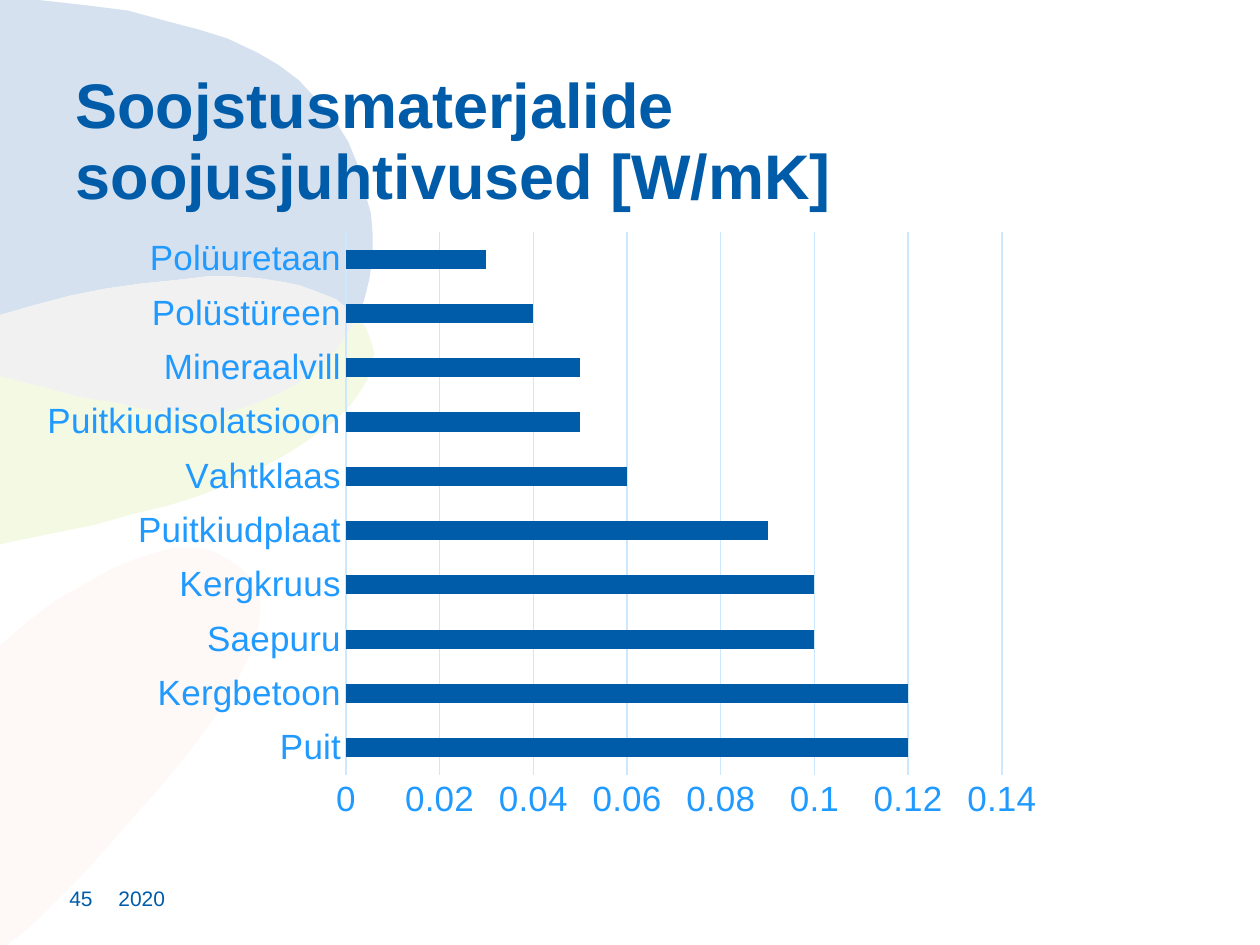
from lxml import etree
from pptx import Presentation
from pptx.chart.data import CategoryChartData
from pptx.dml.color import RGBColor
from pptx.enum import chart as ch, text as tx
from pptx.oxml.ns import qn
from pptx.util import Pt

FONT = "Arial"
COLORS = {"blue": "005CA8", "label": "219AFF", "grid": "CCE8FF", "sky": "D6E1F0",
          "lime": "F3F9E3", "grey": "F1F1F1", "rose": "FEF9F7"}

# Content
TITLE = "Soojstusmaterjalide soojusjuhtivused [W/mK]"
YEAR, PAGE = "2020", "45"
CONDUCTIVITY = [
    ("Puit", 0.12), ("Kergbetoon", 0.12), ("Saepuru", 0.1), ("Kergkruus", 0.1),
    ("Puitkiudplaat", 0.09), ("Vahtklaas", 0.06), ("Puitkiudisolatsioon", 0.05),
    ("Mineraalvill", 0.05), ("Polüstüreen", 0.04), ("Polüuretaan", 0.03),
]
CHART_BOX = (15, 125, 589, 351)
PLOT_BOX = (197.7, 132.6, 374.9, 310.3)

# Petal outlines in points; the two lens edges run from left to right
LENS_TOP = [(0, 180), (21, 174), (40, 169.2), (60, 165), (81, 162), (101, 159.6),
            (118, 158.4), (133, 158.4), (147.6, 159.1), (161, 160.8), (171.4, 163.4),
            (182, 167), (191.5, 171.4), (198, 175.5), (203.8, 180.7)]
LENS_BOTTOM = [(0, 214.6), (24, 221), (46, 226.8), (66, 230.5), (83.5, 233.5),
               (99.5, 235.5), (112, 236.2), (122.5, 235.8), (132, 234.7),
               (142, 231.8), (152, 228), (161, 223.9), (170, 219), (178, 212.4),
               (185.8, 206), (191.5, 200.2), (196.6, 193), (203.8, 180.7)]
SKY_RIM = [(208, 172), (211, 160), (213, 147), (213.2, 134), (212, 122.4),
           (208.5, 108), (204, 93), (198.7, 81.4), (191, 68.4), (182, 57.6),
           (171.4, 46.1), (159, 37), (147, 29.5), (130, 22.3), (114, 16.6),
           (95, 11.5), (73, 6.5), (49, 2.9), (21.6, 0), (0, 0)]
LIME_RIM = [(0, 311), (28.8, 305.3), (54, 299.5), (75, 294.5), (96, 288.7),
            (111.5, 283.7), (125, 278.6), (139, 273), (151.9, 266.4),
            (163.4, 260), (174, 253.4), (183.6, 246.2), (192.2, 239.8), (199, 232.6),
            (205, 225.4), (209.5, 217.4), (212.4, 209), (213.6, 202.3),
            (212.4, 195), (209, 187.2)]
ROSE_RIM = [(0, 368.6), (16, 354.8), (32, 343.4), (48.5, 334), (64, 325.4),
            (76, 320.2), (88.5, 316), (100, 313.2), (111.6, 313.3), (121.7, 315.4),
            (131, 320), (138, 325), (143, 330.5), (147, 337), (149, 345),
            (148.3, 357), (145.4, 368.6), (141, 378), (134, 391.7), (126, 404.6),
            (117.4, 417.6), (106.6, 431.3), (93.6, 447), (79, 463.7), (64, 481),
            (49, 497.5), (34.6, 512), (22.3, 525), (12.2, 533.5), (4.3, 540), (0, 540)]
PETALS = [
    ("rose", ROSE_RIM),
    ("lime", LIME_RIM + LENS_BOTTOM[::-1]),
    ("sky", LENS_TOP + SKY_RIM),
    ("grey", LENS_TOP + LENS_BOTTOM[::-1]),
]


def rgb(name):
    return RGBColor.from_string(COLORS[name])


def style_font(font, size, color, bold=False):
    font.name, font.size, font.bold = FONT, Pt(size), bold
    font.color.rgb = rgb(color)


def write(box, words, place, size, bold=False, anchor=tx.MSO_ANCHOR.BOTTOM,
          margins=(0, 0), line_spacing=None):
    box.left, box.top, box.width, box.height = map(Pt, place)
    frame = box.text_frame
    frame.word_wrap, frame.auto_size = True, tx.MSO_AUTO_SIZE.NONE
    frame.vertical_anchor = anchor
    frame.margin_left = frame.margin_right = Pt(margins[0])
    frame.margin_top = frame.margin_bottom = Pt(margins[1])
    paragraph = frame.paragraphs[0]
    paragraph.text = words
    paragraph.alignment = tx.PP_ALIGN.LEFT
    paragraph.line_spacing = line_spacing
    style_font(paragraph.runs[0].font, size, "blue", bold)


def set_plot_area(chart):
    plot_area = chart.plots[0]._element.getparent()
    layout = plot_area.find(qn("c:layout"))
    if layout is None:
        layout = etree.Element(qn("c:layout"))
        plot_area.insert(0, layout)
    manual = etree.SubElement(layout, qn("c:manualLayout"))
    left, top, width, height = CHART_BOX
    x, y, w, h = PLOT_BOX
    settings = [("layoutTarget", "inner"), ("xMode", "edge"), ("yMode", "edge"),
                ("x", (x - left) / width), ("y", (y - top) / height),
                ("w", w / width), ("h", h / height)]
    for tag, value in settings:
        etree.SubElement(manual, qn(f"c:{tag}")).set("val", str(value))


def add_conductivity_chart(slide):
    data = CategoryChartData()
    data.categories = [material for material, _ in CONDUCTIVITY]
    data.add_series("Series 1", [value for _, value in CONDUCTIVITY])
    chart = slide.shapes.add_chart(ch.XL_CHART_TYPE.BAR_CLUSTERED,
                                   *map(Pt, CHART_BOX), data).chart
    chart.has_legend = chart.has_title = False
    style_font(chart.font, 10, "blue")
    set_plot_area(chart)

    bars = chart.plots[0]
    bars.gap_width, bars.vary_by_categories = 182, False
    fill = bars.series[0].format.fill
    fill.solid()
    fill.fore_color.rgb = rgb("blue")

    materials, scale = chart.category_axis, chart.value_axis
    for axis in (materials, scale):
        axis.major_tick_mark = axis.minor_tick_mark = ch.XL_TICK_MARK.NONE
        style_font(axis.tick_labels.font, 20, "label")
    scale.minimum_scale, scale.maximum_scale, scale.major_unit = 0, 0.14, 0.02
    scale.tick_labels.number_format = "General"
    scale.tick_labels.number_format_is_linked = False
    scale.format.line.fill.background()
    scale.has_major_gridlines = True
    for line in (materials.format.line, scale.major_gridlines.format.line):
        line.color.rgb, line.width = rgb("grid"), Pt(0.75)


def main():
    deck = Presentation()
    deck.slide_width, deck.slide_height = Pt(720), Pt(540)
    slide = deck.slides.add_slide(deck.slide_layouts[5])

    # Background petals
    for color, outline in PETALS:
        builder = slide.shapes.build_freeform(*outline[0], scale=Pt(1))
        builder.add_line_segments(outline[1:], close=True)
        petal = builder.convert_to_shape()
        petal.shadow.inherit = False
        petal.fill.solid()
        petal.fill.fore_color.rgb = rgb(color)
        petal.line.fill.background()

    # Footer
    for words, left, width in ((YEAR, 67.7, 50), (PAGE, 39.6, 28)):
        place = (left, 509, width, 11.5)
        write(slide.shapes.add_textbox(*map(Pt, place)), words, place, 12)

    add_conductivity_chart(slide)

    # Title, in front of the petals
    title = slide.shapes.title
    write(title, TITLE, (36, 37.5, 648, 46), 36, bold=True,
          anchor=tx.MSO_ANCHOR.TOP, margins=(7.2, 3.6), line_spacing=0.94)
    title.element.getparent().append(title.element)

    deck.save("out.pptx")


if __name__ == "__main__":
    main()
